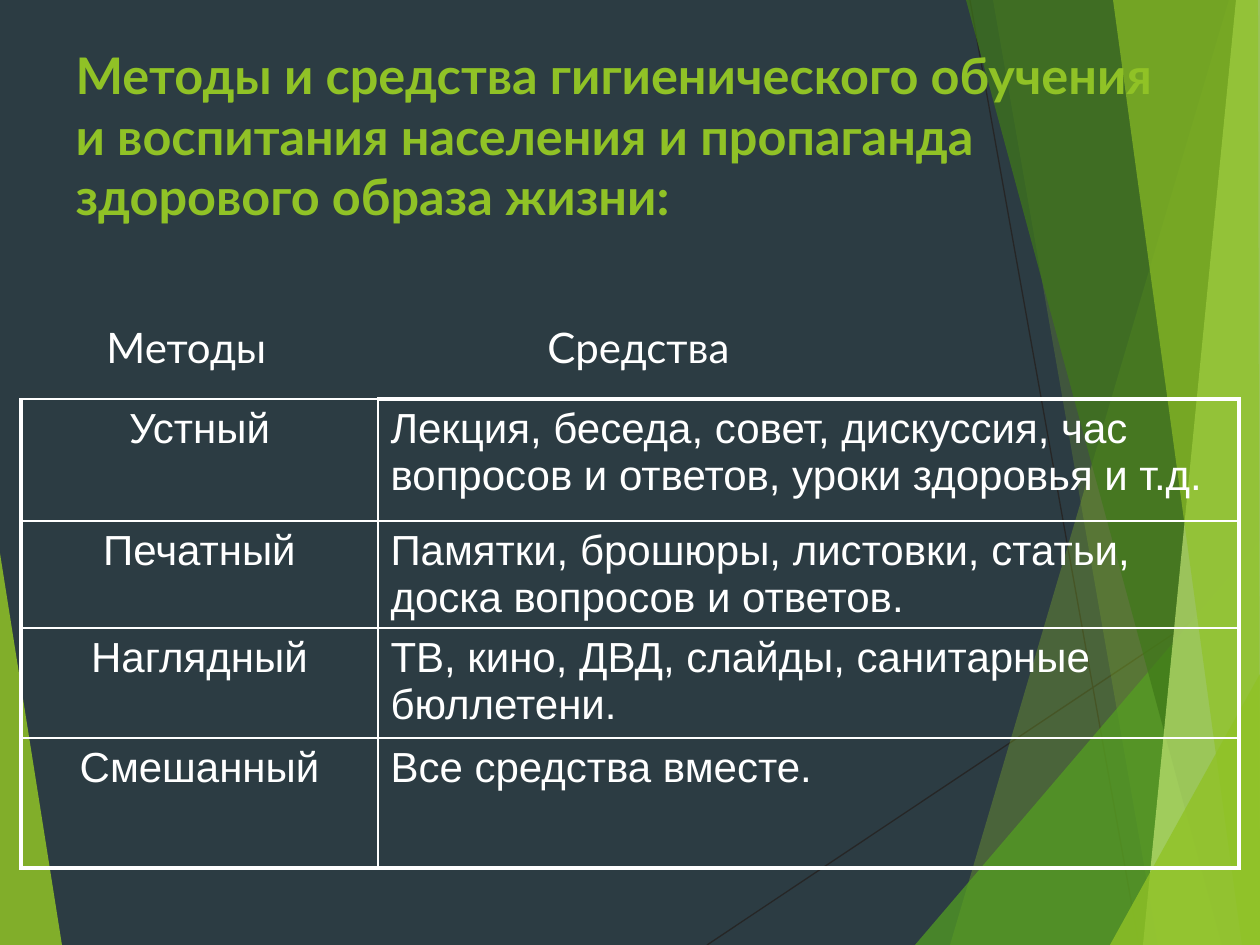
"""Builds a slide on the methods and means of health education."""
from lxml import etree
from pptx import Presentation
from pptx.dml.color import RGBColor
from pptx.enum.shapes import MSO_CONNECTOR
from pptx.enum.text import MSO_ANCHOR, PP_ALIGN
from pptx.oxml.ns import qn
from pptx.util import Emu, Pt

STRAIGHT = MSO_CONNECTOR.STRAIGHT
TOP, MIDDLE = MSO_ANCHOR.TOP, MSO_ANCHOR.MIDDLE
LEFT, CENTER = PP_ALIGN.LEFT, PP_ALIGN.CENTER

SLATE = RGBColor(0x2C, 0x3C, 0x43)
CHARCOAL = RGBColor(0x26, 0x26, 0x26)
WHITE = RGBColor(0xFF, 0xFF, 0xFF)
LIME = RGBColor(0x90, 0xC2, 0x26)
GREEN = RGBColor(0x54, 0xA0, 0x21)
FOREST = RGBColor(0x3F, 0x78, 0x19)
PALE = RGBColor(0xC0, 0xE4, 0x74)

SCALE = 914400 / 126
WIDTH, HEIGHT = 1260, 945

TITLE = ("Методы и средства гигиенического обучения и воспитания населения "
         "и пропаганда здорового образа жизни:")
TITLE_BOX = (63, 38, 1134, 157)
HEADINGS = [
    ("Методы", (94, 315, 231, 63), TOP),
    ("Средства", (535, 315, 221, 63), MIDDLE),
]
METHODS = [
    ("Устный", "Лекция, беседа, совет, дискуссия, час вопросов и ответов, уроки здоровья и т.д."),
    ("Печатный", "Памятки, брошюры, листовки, статьи, доска вопросов и ответов."),
    ("Наглядный", "ТВ, кино, ДВД, слайды, санитарные бюллетени."),
    ("Смешанный", "Все средства вместе."),
]
TABLE_LEFT, TABLE_TOP = 21, 399
COLUMN_WIDTHS = [357, 861]
ROW_HEIGHTS = [122, 107, 110, 130]
THIN, THICK = 1, 2.25

RAYS = [((707, 945), (1260, 576)), ((970, 0), (1139, 945))]
FACETS = [
    (LIME, 85, [(0, 553), (62, 945), (0, 945)]),
    (LIME, 30, [(1229, 0), (950, 945), (1260, 945), (1260, 0)]),
    (LIME, 20, [(993, 0), (1158, 945), (1260, 945), (1260, 0)]),
    (GREEN, 72, [(915, 945), (1260, 541), (1260, 945)]),
    (FOREST, 70, [(966, 0), (1222, 945), (1260, 945), (1260, 0)]),
    (PALE, 70, [(1236, 0), (1143, 945), (1260, 945), (1260, 0)]),
    (LIME, 65, [(1113, 0), (1242, 945), (1260, 945), (1258, 0)]),
    (LIME, 80, [(1110, 945), (1260, 674), (1260, 945)]),
]

TITLE_FONT = {"name": "Lato", "size": Pt(28.8), "bold": True}
HEADING_FONT = {"name": "Lato", "size": Pt(24)}
CELL_FONT = {"name": "Arial", "size": Pt(24)}


def px(*lengths):
    return [Emu(round(length * SCALE)) for length in lengths]


def write(frame, text, font, color, align=LEFT):
    paragraph = frame.paragraphs[0]
    paragraph.alignment = align
    run = paragraph.add_run()
    run.text = text
    for attribute, value in font.items():
        setattr(run.font, attribute, value)
    run.font.color.rgb = color


def add_ray(slide, start, end):
    ray = slide.shapes.add_connector(STRAIGHT, *px(*start, *end))
    ray.line.color.rgb = CHARCOAL
    ray.line.width = Pt(0.75)
    etree.SubElement(ray._element.spPr, qn("a:effectLst"))


def add_facet(slide, color, opacity, points):
    builder = slide.shapes.build_freeform(*points[0], scale=SCALE)
    builder.add_line_segments(points[1:], close=True)
    facet = builder.convert_to_shape()
    facet.shadow.inherit = False
    facet.line.fill.background()
    facet.fill.solid()
    facet.fill.fore_color.rgb = color
    tint = facet._element.spPr.find(".//" + qn("a:srgbClr"))
    etree.SubElement(tint, qn("a:alpha"), val=str(opacity * 1000))


def set_borders(cell, widths):
    properties = cell._tc.get_or_add_tcPr()
    for position, (side, width) in enumerate(widths.items()):
        border = etree.Element(qn("a:ln" + side), w=str(Pt(width)))
        fill = etree.SubElement(border, qn("a:solidFill"))
        etree.SubElement(fill, qn("a:srgbClr"), val=str(WHITE))
        properties.insert(position, border)


def add_methods_table(slide):
    box = px(TABLE_LEFT, TABLE_TOP, sum(COLUMN_WIDTHS), sum(ROW_HEIGHTS))
    table = slide.shapes.add_table(len(METHODS), len(COLUMN_WIDTHS), *box).table
    table.first_row = table.horz_banding = False
    for column, width in zip(table.columns, px(*COLUMN_WIDTHS)):
        column.width = width
    for row, height in zip(table.rows, px(*ROW_HEIGHTS)):
        row.height = height
    last = len(METHODS) - 1
    for r, entry in enumerate(METHODS):
        for c, text in enumerate(entry):
            cell = table.cell(r, c)
            cell.fill.background()
            write(cell.text_frame, text, CELL_FONT, WHITE, LEFT if c else CENTER)
            set_borders(cell, {
                "L": THIN if c else THICK,
                "R": THICK if c else THIN,
                "T": THICK if c and r == 0 else THIN,
                "B": THICK if r == last else THIN,
            })


def add_heading(slide, text, box, anchor):
    frame = slide.shapes.add_textbox(*px(*box)).text_frame
    frame.word_wrap = True
    frame.vertical_anchor = anchor
    write(frame, text, HEADING_FONT, WHITE)


def place_title(slide):
    title = slide.shapes.title
    title.left, title.top, title.width, title.height = px(*TITLE_BOX)
    title.text_frame.vertical_anchor = TOP
    title.text_frame.word_wrap = True
    write(title.text_frame, TITLE, TITLE_FONT, LIME)
    slide.shapes._spTree.append(title._element)


def main():
    deck = Presentation()
    deck.slide_width, deck.slide_height = px(WIDTH, HEIGHT)
    slide = deck.slides.add_slide(deck.slide_layouts[5])
    slide.background.fill.solid()
    slide.background.fill.fore_color.rgb = SLATE
    for ray in RAYS:
        add_ray(slide, *ray)
    for facet in FACETS:
        add_facet(slide, *facet)
    place_title(slide)
    add_methods_table(slide)
    for heading in HEADINGS:
        add_heading(slide, *heading)
    deck.save("out.pptx")


if __name__ == "__main__":
    main()
